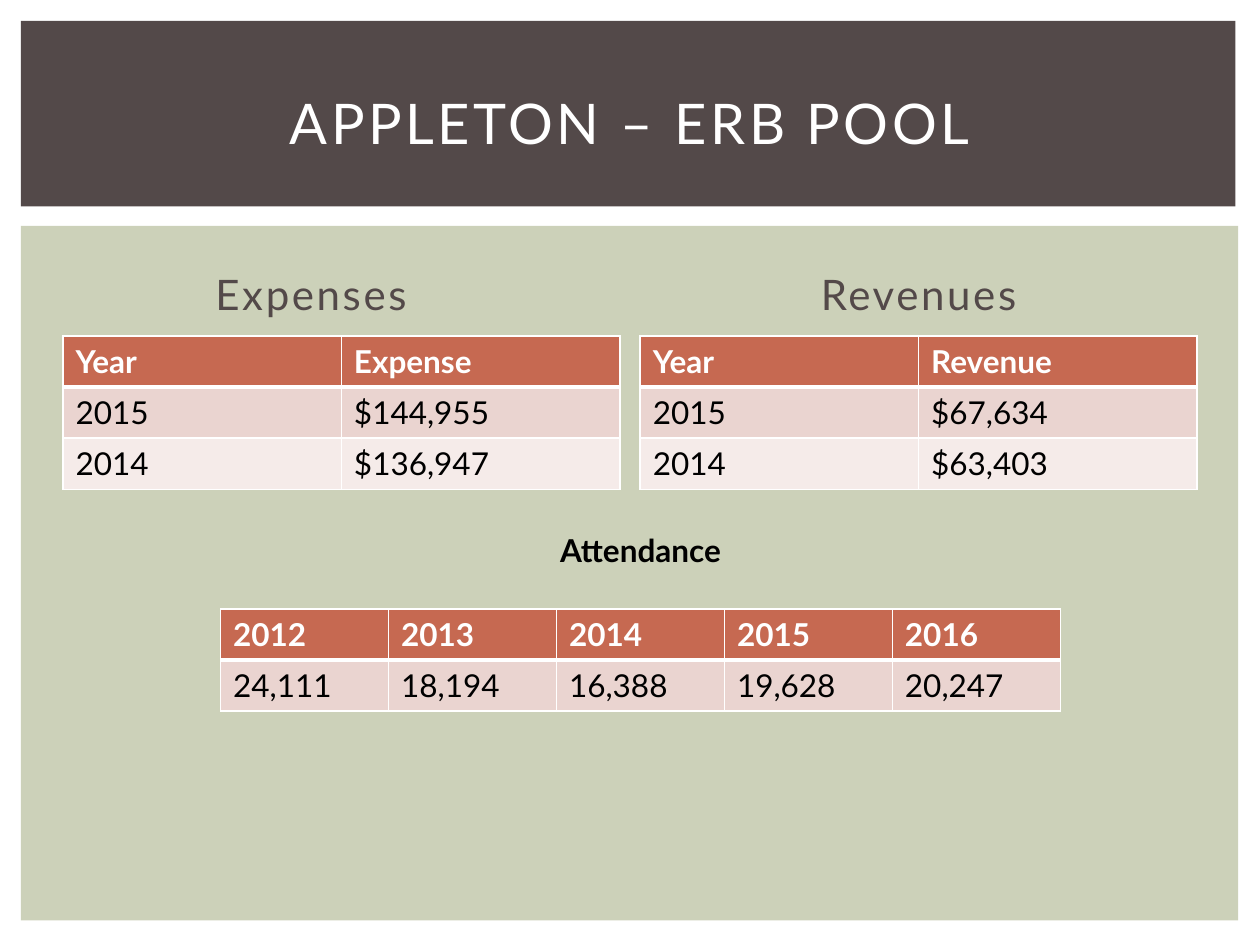
"""Build the Erb Pool slide with its expense, revenue and attendance tables."""
from lxml.etree import SubElement
from pptx import Presentation
from pptx.dml.color import RGBColor
from pptx.enum.shapes import MSO_SHAPE
from pptx.enum.text import MSO_ANCHOR, PP_ALIGN
from pptx.oxml.ns import qn
from pptx.util import Pt

FONT = "Lato"
WHITE, BLACK, BROWN, SAGE = "FFFFFF", "000000", "534949", "CCD1B9"
HEADER, BANDS = "C66951", ("EAD4D0", "F5EBE9")
ROW_HEIGHT = 29.2


def paint(fill, color):
    fill.solid()
    fill.fore_color.rgb = RGBColor.from_string(color)


def write(frame, text, color=BLACK, size=18, bold=False, align=PP_ALIGN.LEFT,
          anchor=MSO_ANCHOR.TOP, spacing=0, before=0):
    frame.word_wrap = True
    frame.vertical_anchor = anchor
    paragraph = frame.paragraphs[0]
    paragraph.alignment = align
    paragraph.space_before = Pt(before)
    run = paragraph.add_run()
    run.text = text
    run.font.name = FONT
    run.font.size = Pt(size)
    run.font.bold = bold
    run.font.color.rgb = RGBColor.from_string(color)
    if spacing:
        run.font._element.set("spc", str(int(spacing * 100)))


def add_panel(slide, left, top, width, height, color):
    panel = slide.shapes.add_shape(
        MSO_SHAPE.RECTANGLE, Pt(left), Pt(top), Pt(width), Pt(height))
    panel.shadow.inherit = False
    paint(panel.fill, color)
    panel.line.fill.background()


def add_label(slide, text, left, top, width, height, **style):
    label = slide.shapes.add_textbox(Pt(left), Pt(top), Pt(width), Pt(height))
    write(label.text_frame, text, align=PP_ALIGN.CENTER, **style)


def set_borders(cell, **weights):
    properties = cell._tc.get_or_add_tcPr()
    for side in "LRTB":
        edge = SubElement(properties, qn(f"a:ln{side}"),
                          w=str(Pt(weights.get(side, 1))))
        solid = SubElement(edge, qn("a:solidFill"))
        SubElement(solid, qn("a:srgbClr"), val=WHITE)


def add_banded_table(slide, rows, left, top, column_width):
    columns = len(rows[0])
    table = slide.shapes.add_table(
        len(rows), columns, Pt(left), Pt(top),
        Pt(column_width * columns), Pt(ROW_HEIGHT * len(rows))).table
    for column in table.columns:
        column.width = Pt(column_width)
    for r, values in enumerate(rows):
        table.rows[r].height = Pt(ROW_HEIGHT)
        heading = r == 0
        for c, value in enumerate(values):
            cell = table.cell(r, c)
            set_borders(cell, T=3 if r == 1 else 1, B=3 if heading else 1)
            paint(cell.fill, HEADER if heading else BANDS[(r - 1) % 2])
            write(cell.text_frame, value, bold=heading,
                  color=WHITE if heading else BLACK)


def main():
    deck = Presentation()
    deck.slide_width, deck.slide_height = Pt(720), Pt(540)
    slide = deck.slides.add_slide(deck.slide_layouts[6])
    paint(slide.background.fill, WHITE)

    add_panel(slide, 12, 129, 695.5, 397, SAGE)
    add_panel(slide, 12, 12, 694, 106, BROWN)
    add_label(slide, "APPLETON – ERB POOL", 30, 28, 660, 83, color=WHITE,
              size=32, anchor=MSO_ANCHOR.MIDDLE, spacing=2)

    finances = (
        ("Expenses\t", 36, [("Year", "Expense"), ("2015", "$144,955"),
                            ("2014", "$136,947")]),
        ("Revenues", 365.8, [("Year", "Revenue"), ("2015", "$67,634"),
                             ("2014", "$63,403")]),
    )
    for title, left, rows in finances:
        add_label(slide, title, left, 135.4, 318.2, 50.4, color=BROWN, size=24,
                  anchor=MSO_ANCHOR.BOTTOM, spacing=1.5, before=4.8)
        add_banded_table(slide, rows, left, 192, 159.1)

    add_label(slide, "Attendance", 246, 300, 240, 29, bold=True)
    attendance = [("2012", "2013", "2014", "2015", "2016"),
                  ("24,111", "18,194", "16,388", "19,628", "20,247")]
    add_banded_table(slide, attendance, 126, 348, 96)

    deck.save("out.pptx")


if __name__ == "__main__":
    main()
